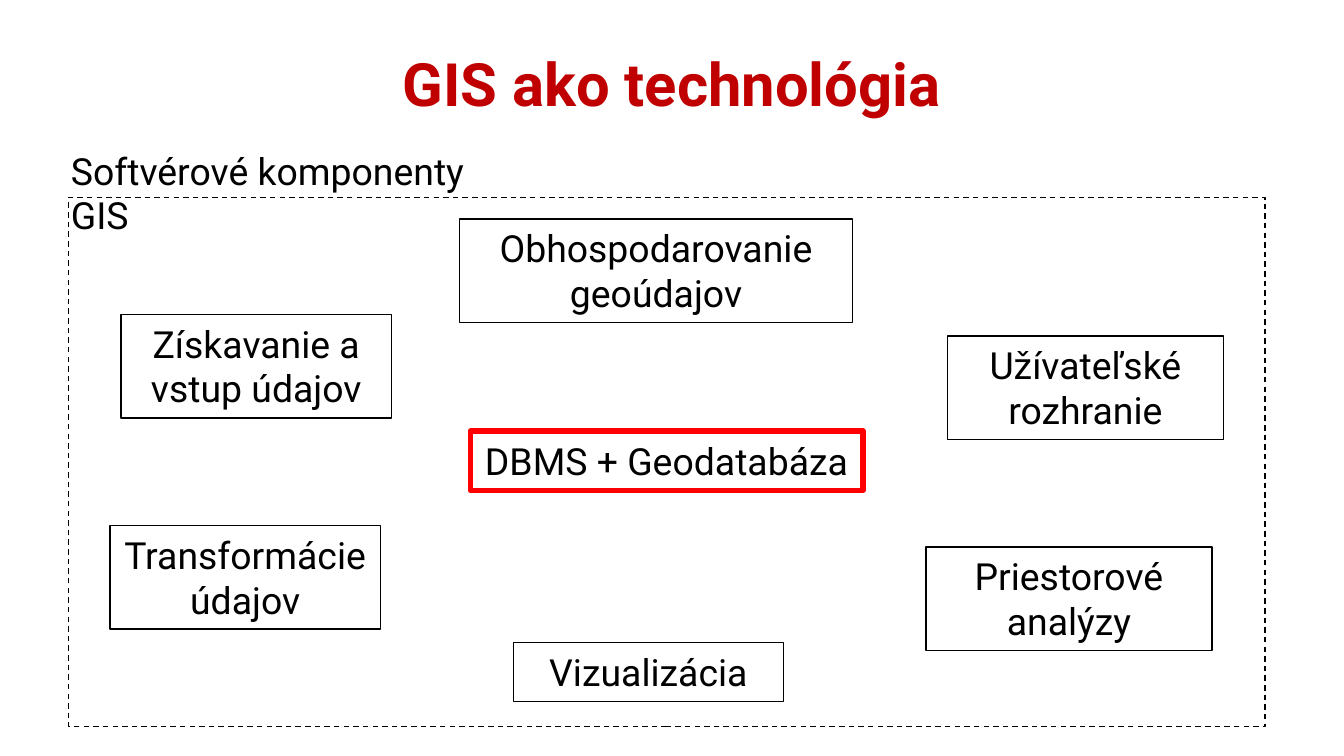
"""Build the slide on the software components of a GIS."""
import dataclasses

import pptx
import pptx.dml.color
import pptx.enum.dml
import pptx.enum.shapes
import pptx.enum.text
import pptx.util

Cm = pptx.util.Cm
Align = pptx.enum.text.PP_ALIGN
Anchor = pptx.enum.text.MSO_ANCHOR


@dataclasses.dataclass(frozen=True)
class Theme:
    font: str = "Roboto"
    title_color: str = "C00000"
    ink: str = "000000"
    core_color: str = "FF0000"
    title_size: int = 32
    body_size: int = 20
    thin_line: float = 0.75
    core_line: float = 3


THEME = Theme()
ONE_LINE, TWO_LINES = 1.12, 1.96

COMPONENTS = [
    ("Získavanie a vstup údajov", 2.29, 5.94, 5.11, TWO_LINES),
    ("Obhospodarovanie geoúdajov", 8.69, 4.14, 7.42, TWO_LINES),
    ("Priestorové analýzy", 17.5, 10.34, 5.41, TWO_LINES),
    ("Vizualizácia", 9.7, 12.14, 5.11, ONE_LINE),
    ("Užívateľské rozhranie", 17.91, 6.35, 5.21, TWO_LINES),
    ("Transformácie údajov", 2.08, 9.93, 5.11, TWO_LINES),
]


def rgb(value):
    return pptx.dml.color.RGBColor.from_string(value)


def write(holder, text, size, color, align, anchor=Anchor.TOP, bold=False):
    frame = holder.text_frame
    frame.word_wrap = True
    frame.vertical_anchor = anchor
    frame.text = text
    paragraph = frame.paragraphs[0]
    paragraph.alignment = align
    paragraph.font.name = THEME.font
    paragraph.font.size = pptx.util.Pt(size)
    paragraph.font.bold = bold
    paragraph.font.color.rgb = rgb(color)


def add_label(slide, text, left, top, width, height, *style, **options):
    label = slide.shapes.add_textbox(Cm(left), Cm(top), Cm(width), Cm(height))
    write(label, text, *style, **options)


def add_outline(slide, left, top, width, height, color=THEME.ink, weight=THEME.thin_line):
    outline = slide.shapes.add_shape(
        pptx.enum.shapes.MSO_SHAPE.RECTANGLE, Cm(left), Cm(top), Cm(width), Cm(height))
    outline.shadow.inherit = False
    outline.fill.background()
    outline.line.color.rgb = rgb(color)
    outline.line.width = pptx.util.Pt(weight)
    return outline


def add_component(slide, text, *box, **line):
    component = add_outline(slide, *box, **line)
    write(component, text, THEME.body_size, THEME.ink, Align.CENTER)


def main():
    deck = pptx.Presentation()
    deck.slide_width, deck.slide_height = Cm(25.4), Cm(14.29)
    slide = deck.slides.add_slide(deck.slide_layouts[6])

    add_label(slide, "GIS ako technológia", 1.27, 0.36, 22.86, 2.39,
              THEME.title_size, THEME.title_color, Align.CENTER,
              anchor=Anchor.MIDDLE, bold=True)

    system_border = add_outline(slide, 1.3, 3.73, 22.61, 10.01)
    system_border.line.dash_style = pptx.enum.dml.MSO_LINE.DASH

    for component in COMPONENTS:
        add_component(slide, *component)
    add_component(slide, "DBMS + Geodatabáza", 8.89, 8.15, 7.42, ONE_LINE,
                  color=THEME.core_color, weight=THEME.core_line)

    add_label(slide, "Softvérové komponenty GIS", 1.09, 2.67, 8.81, ONE_LINE,
              THEME.body_size, THEME.ink, Align.LEFT)
    deck.save("out.pptx")


if __name__ == "__main__":
    main()
